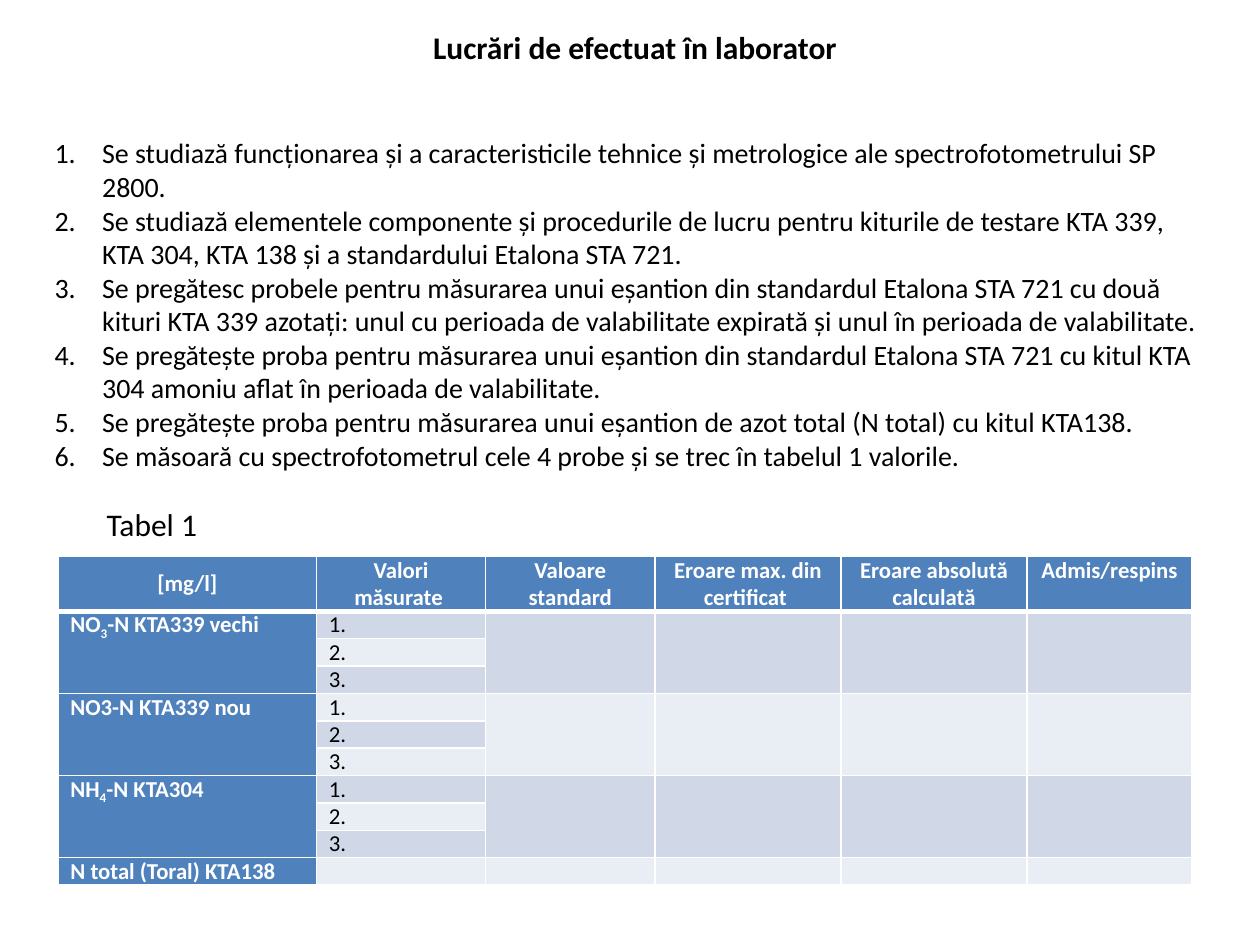
"""Build the slide with the laboratory tasks and the table of measured values."""
import pptx
import pptx.dml.color
import pptx.enum.text
import pptx.oxml.ns
import pptx.util
from lxml import etree

Cm, Pt = pptx.util.Cm, pptx.util.Pt
RGBColor = pptx.dml.color.RGBColor
ALIGN, ANCHOR = pptx.enum.text.PP_ALIGN, pptx.enum.text.MSO_ANCHOR
qn = pptx.oxml.ns.qn

BLACK = RGBColor(0x00, 0x00, 0x00)
WHITE = RGBColor(0xFF, 0xFF, 0xFF)
BLUE = RGBColor(0x4F, 0x81, 0xBD)
BANDS = [RGBColor(0xD0, 0xD8, 0xE8), RGBColor(0xE9, 0xED, 0xF4)]
FONT = "Calibri"

TITLE = "Lucrări de efectuat în laborator"
TASKS = [
    "Se studiază funcționarea și a caracteristicile tehnice și metrologice ale spectrofotometrului SP 2800.",
    "Se studiază elementele componente și procedurile de lucru pentru kiturile de testare KTA 339, "
    "KTA 304, KTA 138 și a standardului Etalona STA 721.",
    "Se pregătesc probele pentru măsurarea unui eșantion din standardul Etalona STA 721 cu două "
    "kituri KTA 339 azotați: unul cu perioada de valabilitate expirată și unul în perioada de valabilitate.",
    "Se pregătește proba pentru măsurarea unui eșantion din standardul Etalona STA 721 cu kitul KTA "
    "304 amoniu aflat în perioada de valabilitate.",
    "Se pregătește proba pentru măsurarea unui eșantion de azot total (N total) cu kitul KTA138.",
    "Se măsoară cu spectrofotometrul cele 4 probe și se trec în tabelul 1 valorile.",
]
CAPTION = "Tabel 1"
HEADERS = ["[mg/l]", "Valori măsurate ", "Valoare\nstandard", "Eroare max. din certificat ",
           "Eroare absolută calculată", "Admis/respins"]
SAMPLES = [("NO_3_-N KTA339 vechi", 3), ("NO3-N KTA339 nou", 3),
           ("NH_4_-N KTA304", 3), ("N total (Toral) KTA138", 1)]
WIDTHS = [5.21, 3.41, 3.41, 3.75, 3.75, 3.33]
HEADER_HEIGHT, ROW_HEIGHT = 1.1, 0.55


def write(tf, text, size=13, color=BLACK, bold=False, align=ALIGN.LEFT, numbered=False):
    """Fill a text frame; newlines part paragraphs and underscores enclose subscripts."""
    for i, line in enumerate(text.split("\n")):
        p = tf.paragraphs[0] if i == 0 else tf.add_paragraph()
        p.alignment = align
        if numbered:
            pPr = p._p.get_or_add_pPr()
            pPr.set("marL", str(Cm(0.96)))
            pPr.set("indent", str(-Cm(0.96)))
            etree.SubElement(pPr, qn("a:buFont"), typeface="+mj-lt")
            etree.SubElement(pPr, qn("a:buAutoNum"), type="arabicPeriod")
        for j, part in enumerate(line.split("_") if line else []):
            r = p.add_run()
            r.text = part
            r.font.name, r.font.size, r.font.bold = FONT, Pt(size), bold
            r.font.color.rgb = color
            if j % 2:
                r.font._element.set("baseline", "-25000")
        if not line:
            etree.SubElement(p._p, qn("a:endParaRPr"), sz=str(size * 100))


def add_text(s, left, top, width, height, text, anchor=ANCHOR.TOP, **fmt):
    """Add a wrapped text box, placed in centimetres."""
    tf = s.shapes.add_textbox(Cm(left), Cm(top), Cm(width), Cm(height)).text_frame
    tf.word_wrap = True
    tf.vertical_anchor = anchor
    write(tf, text, **fmt)


def style_cell(cell, fill, bottom=1):
    """Set the margins, white borders and fill of a cell."""
    cell.margin_left = cell.margin_right = Cm(0.25)
    cell.margin_top = cell.margin_bottom = 0
    tcPr = cell._tc.get_or_add_tcPr()
    for side, width in zip("LRTB", (1, 1, 1, bottom)):
        ln = etree.SubElement(tcPr, qn(f"a:ln{side}"), w=str(Pt(width)))
        etree.SubElement(etree.SubElement(ln, qn("a:solidFill")), qn("a:srgbClr"), val=str(WHITE))
    cell.fill.solid()
    cell.fill.fore_color.rgb = fill


def add_results(s, left, top):
    """Add the results table with one merged band for each sample."""
    count = sum(n for _, n in SAMPLES)
    table = s.shapes.add_table(count + 1, len(WIDTHS), Cm(left), Cm(top), Cm(sum(WIDTHS)),
                               Cm(HEADER_HEIGHT + count * ROW_HEIGHT)).table
    for column, width in zip(table.columns, WIDTHS):
        column.width = Cm(width)
    for i, row in enumerate(table.rows):
        row.height = Cm(ROW_HEIGHT if i else HEADER_HEIGHT)
    for col, text in enumerate(HEADERS):
        cell = table.cell(0, col)
        style_cell(cell, BLUE, bottom=3)
        write(cell.text_frame, text, color=WHITE, bold=True, align=ALIGN.CENTER)
    table.cell(0, 0).vertical_anchor = ANCHOR.MIDDLE

    first = 1
    for name, n in SAMPLES:
        for k in range(n):
            for col in range(len(WIDTHS)):
                cell = table.cell(first + k, col)
                style_cell(cell, BANDS[(first + k - 1) % 2] if col else BLUE)
                if col == 0 and k == 0:
                    write(cell.text_frame, name, color=WHITE, bold=True)
                else:
                    write(cell.text_frame, f"{k + 1}." if col == 1 and n > 1 else "")
        if n > 1:
            for col in (0, *range(2, len(WIDTHS))):
                table.cell(first, col).merge(table.cell(first + n - 1, col))
        first += n


def main():
    """Build and save the slide."""
    prs = pptx.Presentation()
    prs.slide_width, prs.slide_height = Cm(25.4), Cm(19.05)
    s = prs.slides.add_slide(prs.slide_layouts[6])
    add_text(s, 0.84, 0.45, 23.93, 1.02, TITLE, size=18, bold=True, align=ALIGN.CENTER)
    add_results(s, 1.17, 11.22)
    add_text(s, 0.85, 2.24, 23.65, 7.77, "\n".join(TASKS), anchor=ANCHOR.MIDDLE, size=16, numbered=True)
    add_text(s, 1.9, 10.06, 2.97, 1.02, CAPTION, size=18)
    prs.save("out.pptx")


if __name__ == "__main__":
    main()
